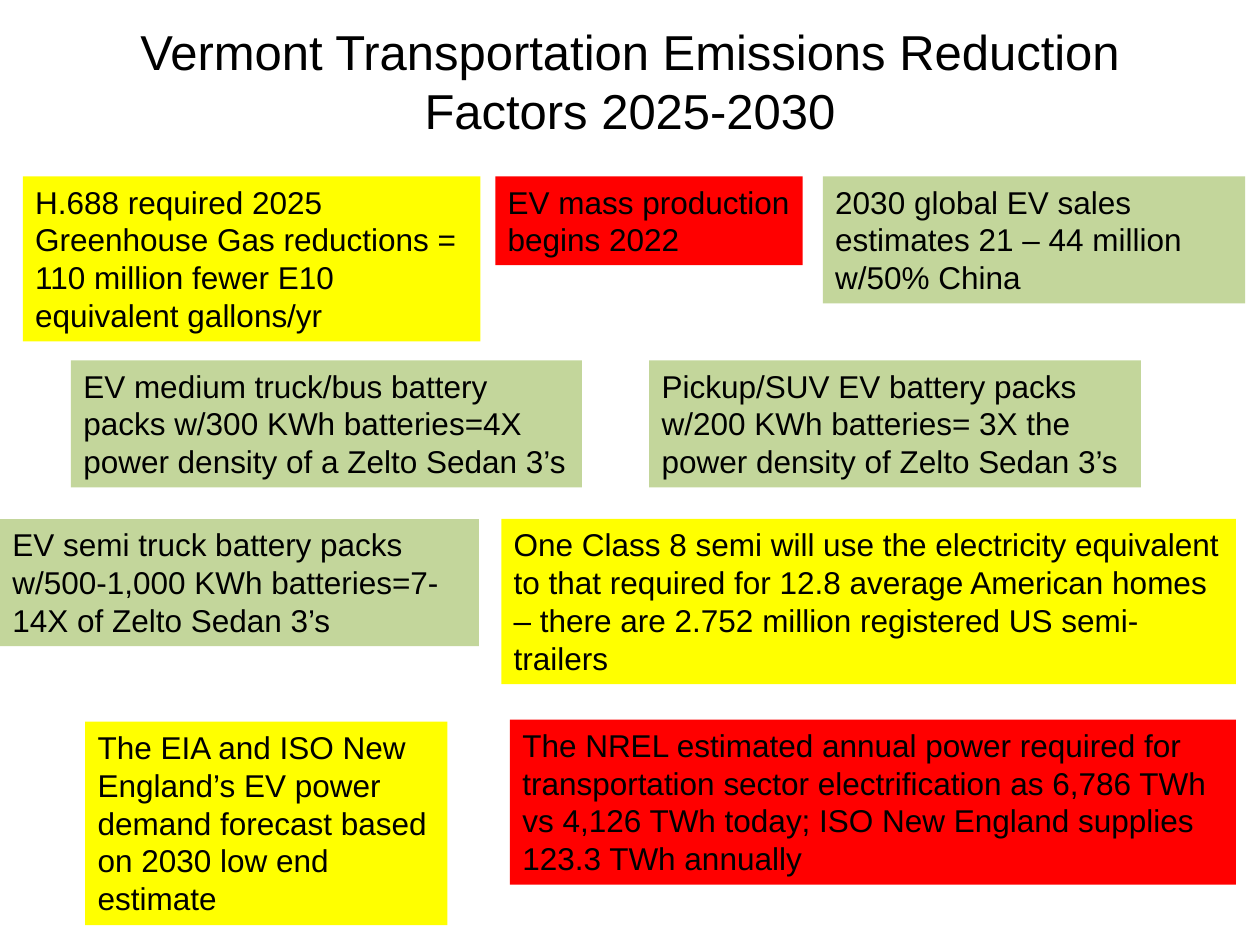
import pptx
import pptx.util
import pptx.dml.color
import pptx.enum.shapes
import pptx.enum.text

Pt = pptx.util.Pt
ALIGN = pptx.enum.text.PP_ALIGN
ANCHOR = pptx.enum.text.MSO_ANCHOR

YELLOW, GREEN, RED, BLACK = "FFFF00", "C3D69B", "FF0000", "000000"

# Tops of the rows of notes
ROW1, ROW2, ROW3, ROW4 = 100.8, 206, 296.6, 411.2

# Left, top, width, line count, fill, text
NOTES = [
    (13, ROW1, 261.5, 4, YELLOW,
     "H.688 required 2025 Greenhouse Gas reductions = "
     "110 million fewer E10 equivalent gallons/yr"),
    (283, ROW1, 175.6, 2, RED, "EV mass production\nbegins 2022"),
    (470.2, ROW1, 241.4, 3, GREEN,
     "2030 global EV sales estimates 21 – 44 million w/50% China"),
    (40.5, ROW2, 292, 3, GREEN,
     "EV medium truck/bus battery packs w/300 KWh batteries=4X "
     "power density of a Zelto Sedan 3’s"),
    (371, ROW2, 281, 3, GREEN,
     "Pickup/SUV EV battery packs w/200 KWh batteries= 3X the "
     "power density of Zelto Sedan 3’s"),
    (0, ROW3, 273.7, 3, GREEN,
     "EV semi truck battery packs w/500-1,000 KWh "
     "batteries=7-14X of Zelto Sedan 3’s"),
    (286.5, ROW3, 419.8, 4, YELLOW,
     "One Class 8 semi will use the electricity equivalent to that "
     "required for 12.8 average American homes – there are 2.752 "
     "million registered US semi-trailers"),
    (48.7, ROW4 + 1.2, 207, 5, YELLOW,
     "The EIA and ISO New England’s EV power demand forecast "
     "based on 2030 low end estimate"),
    (291.4, ROW4, 414.9, 4, RED,
     "The NREL estimated annual power required for transportation "
     "sector electrification as 6,786 TWh vs 4,126 TWh today; "
     "ISO New England supplies 123.3 TWh annually"),
]


def color(code):
    return pptx.dml.color.RGBColor.from_string(code)


def write(shape, text, size, align, anchor):
    frame = shape.text_frame
    frame.text = text
    frame.word_wrap = True
    frame.vertical_anchor = anchor
    for para in frame.paragraphs:
        para.alignment = align
        for run in para.runs:
            run.font.name = "Arial"
            run.font.size = Pt(size)
            run.font.color.rgb = color(BLACK)


def add_title(slide, left, top, width, height):
    box = slide.shapes.add_textbox(Pt(left), Pt(top), Pt(width), Pt(height))
    write(box, "Vermont Transportation Emissions Reduction Factors 2025-2030",
          28, ALIGN.CENTER, ANCHOR.MIDDLE)


def add_note(slide, left, top, width, lines, fill, text):
    # Height follows the line count plus the top and bottom margins
    height = 7.2 + 21.8 * lines
    note = slide.shapes.add_shape(
        pptx.enum.shapes.MSO_SHAPE.RECTANGLE,
        Pt(left), Pt(top), Pt(width), Pt(height))
    note.shadow.inherit = False
    note.fill.solid()
    note.fill.fore_color.rgb = color(fill)
    note.line.fill.background()
    write(note, text, 18, ALIGN.LEFT, ANCHOR.TOP)
    # Notes with set line breaks need no wrapping
    note.text_frame.word_wrap = "\n" not in text


def main():
    deck = pptx.Presentation()
    deck.slide_width, deck.slide_height = Pt(720), Pt(540)
    slide = deck.slides.add_slide(deck.slide_layouts[6])
    add_title(slide, 36, 13, 648, 65.5)
    for note in NOTES:
        add_note(slide, *note)
    deck.save("out.pptx")


if __name__ == "__main__":
    main()
